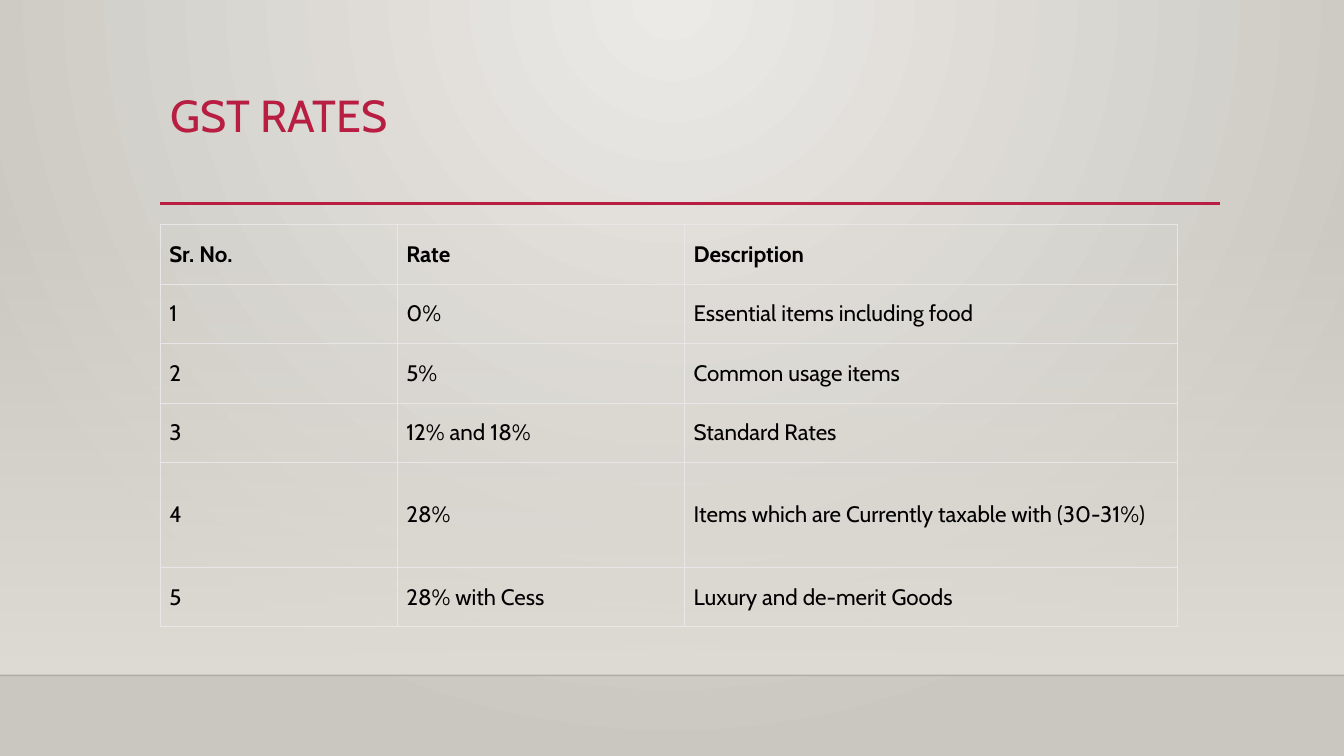
from dataclasses import dataclass
from typing import Any

from lxml.etree import SubElement
from pptx import Presentation
from pptx.dml.color import RGBColor
from pptx.enum.shapes import MSO_CONNECTOR, MSO_SHAPE
from pptx.enum.text import MSO_ANCHOR, MSO_AUTO_SIZE, PP_ALIGN
from pptx.oxml import parse_xml
from pptx.oxml.ns import nsdecls, qn
from pptx.util import Inches, Pt

SLIDE_WIDTH, SLIDE_HEIGHT = 13.33, 7.5
LEFT_EDGE = 1.59
FLOOR_TOP = 6.7
GLOW_TOP = 2.21
TYPEFACE = "Cabin"

COLORS = {
    "center": "ECEAE7",
    "edge": "CAC7C1",
    "glow": "DFDBD5",
    "floor": "000001",
    "accent": "B71E42",
    "text": "000000",
    "grid": "E8E7E7",
}

COLUMN_WIDTHS = [2.35, 2.85, 4.89]
ROW_HEIGHT, TALL_ROW_HEIGHT = 0.59, 1.04
TALL_RATE = "28%"

RATES = [
    ("Sr. No.", "Rate", "Description"),
    ("1", "0%", "Essential items including food"),
    ("2", "5%", "Common usage items"),
    ("3", "12% and 18%", "Standard Rates"),
    ("4", "28%", "Items which are Currently taxable with (30-31%)"),
    ("5", "28% with Cess", "Luxury and de-merit Goods"),
]

TITLE_FRAME = {
    "vertical_anchor": MSO_ANCHOR.TOP,
    "auto_size": MSO_AUTO_SIZE.NONE,
    "word_wrap": True,
}
TITLE_PARAGRAPH = {"alignment": PP_ALIGN.LEFT, "line_spacing": 0.9}
CELL_FORMAT = {
    "vertical_anchor": MSO_ANCHOR.MIDDLE,
    "margin_left": Inches(0.09),
    "margin_right": Inches(0.09),
    "margin_top": Inches(0.05),
    "margin_bottom": Inches(0.05),
}
PLAIN_TABLE = {"first_row": False, "horz_banding": False}


@dataclass(frozen=True)
class Rule:
    left: float
    right: float
    top: float
    color: str
    weight: float
    opacity: int = 100


@dataclass(frozen=True)
class Stop:
    position: int
    color: str
    opacity: int = 100


RULES = [
    Rule(0, SLIDE_WIDTH, FLOOR_TOP, "floor", 1, 20),
    Rule(LEFT_EDGE, 12.1, 2.02, "accent", 2.5),
]
RADIAL = (
    '<a:path path="circle">'
    '<a:fillToRect l="43000" t="0" r="43000" b="100000"/></a:path>'
)
DOWNWARD = '<a:lin ang="5400000" scaled="0"/>'


def apply_format(target: Any, values: dict[str, Any]) -> None:
    for attribute, value in values.items():
        setattr(target, attribute, value)


def set_font(paragraph: Any, size: float, color: str, bold: bool = False) -> None:
    font = paragraph.runs[0].font
    apply_format(font, {"name": TYPEFACE, "size": Pt(size), "bold": bold})
    font.color.rgb = RGBColor.from_string(COLORS[color])


def replace_empty_fill(properties: Any, stops: list[Stop], direction: str) -> None:
    """Swap the noFill child of a property element for a gradient."""
    stop_xml = "".join(
        f'<a:gs pos="{stop.position * 1000}"><a:srgbClr val="{COLORS[stop.color]}">'
        f'<a:alpha val="{stop.opacity * 1000}"/></a:srgbClr></a:gs>'
        for stop in stops
    )
    gradient = parse_xml(
        f'<a:gradFill {nsdecls("a")} rotWithShape="1">'
        f"<a:gsLst>{stop_xml}</a:gsLst>{direction}</a:gradFill>"
    )
    properties.replace(properties.find(qn("a:noFill")), gradient)


def paint_backdrop(slide: Any) -> None:
    slide.background.fill.background()
    replace_empty_fill(
        slide._element.find(f".//{qn('p:bgPr')}"),
        [Stop(0, "center"), Stop(100, "edge")],
        RADIAL,
    )
    glow = slide.shapes.add_shape(
        MSO_SHAPE.RECTANGLE, 0, Inches(GLOW_TOP),
        Inches(SLIDE_WIDTH), Inches(FLOOR_TOP - GLOW_TOP),
    )
    glow.shadow.inherit = False
    glow.line.fill.background()
    glow.fill.background()
    replace_empty_fill(
        glow._element.spPr, [Stop(0, "glow", 0), Stop(100, "glow")], DOWNWARD
    )


def draw_rule(slide: Any, rule: Rule) -> None:
    connector = slide.shapes.add_connector(
        MSO_CONNECTOR.STRAIGHT, Inches(rule.left), Inches(rule.top),
        Inches(rule.right), Inches(rule.top),
    )
    connector.line.width = Pt(rule.weight)
    connector.line.color.rgb = RGBColor.from_string(COLORS[rule.color])
    properties = connector._element.spPr
    if rule.opacity < 100:
        ink = properties.find(f".//{qn('a:srgbClr')}")
        SubElement(ink, qn("a:alpha")).set("val", str(rule.opacity * 1000))
    SubElement(properties, qn("a:effectLst"))


def write_title(slide: Any, wording: str) -> None:
    title = slide.shapes.title
    box = {"left": LEFT_EDGE, "top": 0.88, "width": 10.5, "height": 1.1}
    apply_format(title, {side: Inches(length) for side, length in box.items()})
    apply_format(title.text_frame, TITLE_FRAME)
    title.text_frame.text = wording
    heading = title.text_frame.paragraphs[0]
    apply_format(heading, TITLE_PARAGRAPH)
    set_font(heading, 32, "accent")


def add_borders(cell: Any) -> None:
    properties = cell._tc.get_or_add_tcPr()
    for position, side in enumerate(("lnL", "lnR", "lnT", "lnB")):
        border = parse_xml(
            f'<a:{side} {nsdecls("a")} w="{Pt(0.75)}"><a:solidFill>'
            f'<a:srgbClr val="{COLORS["grid"]}"/></a:solidFill></a:{side}>'
        )
        properties.insert(position, border)


def build_rate_table(slide: Any) -> None:
    heights = [
        TALL_ROW_HEIGHT if rate == TALL_RATE else ROW_HEIGHT for _, rate, _ in RATES
    ]
    rate_table = slide.shapes.add_table(
        len(RATES), len(COLUMN_WIDTHS), Inches(LEFT_EDGE), Inches(2.23),
        Inches(sum(COLUMN_WIDTHS)), Inches(sum(heights)),
    ).table
    apply_format(rate_table, PLAIN_TABLE)
    for column, width in zip(rate_table.columns, COLUMN_WIDTHS):
        column.width = Inches(width)
    for row_index, (row, height) in enumerate(zip(rate_table.rows, heights)):
        row.height = Inches(height)
        for cell, wording in zip(row.cells, RATES[row_index]):
            cell.text = wording
            apply_format(cell, CELL_FORMAT)
            set_font(cell.text_frame.paragraphs[0], 16, "text", bold=row_index == 0)
            cell.fill.background()
            add_borders(cell)


def main() -> None:
    presentation = Presentation()
    presentation.slide_width = Inches(SLIDE_WIDTH)
    presentation.slide_height = Inches(SLIDE_HEIGHT)
    title_only = presentation.slide_layouts[5]
    slide = presentation.slides.add_slide(title_only)
    paint_backdrop(slide)
    for rule in RULES:
        draw_rule(slide, rule)
    write_title(slide, "GST RATES")
    build_rate_table(slide)
    presentation.save("out.pptx")


if __name__ == "__main__":
    main()
